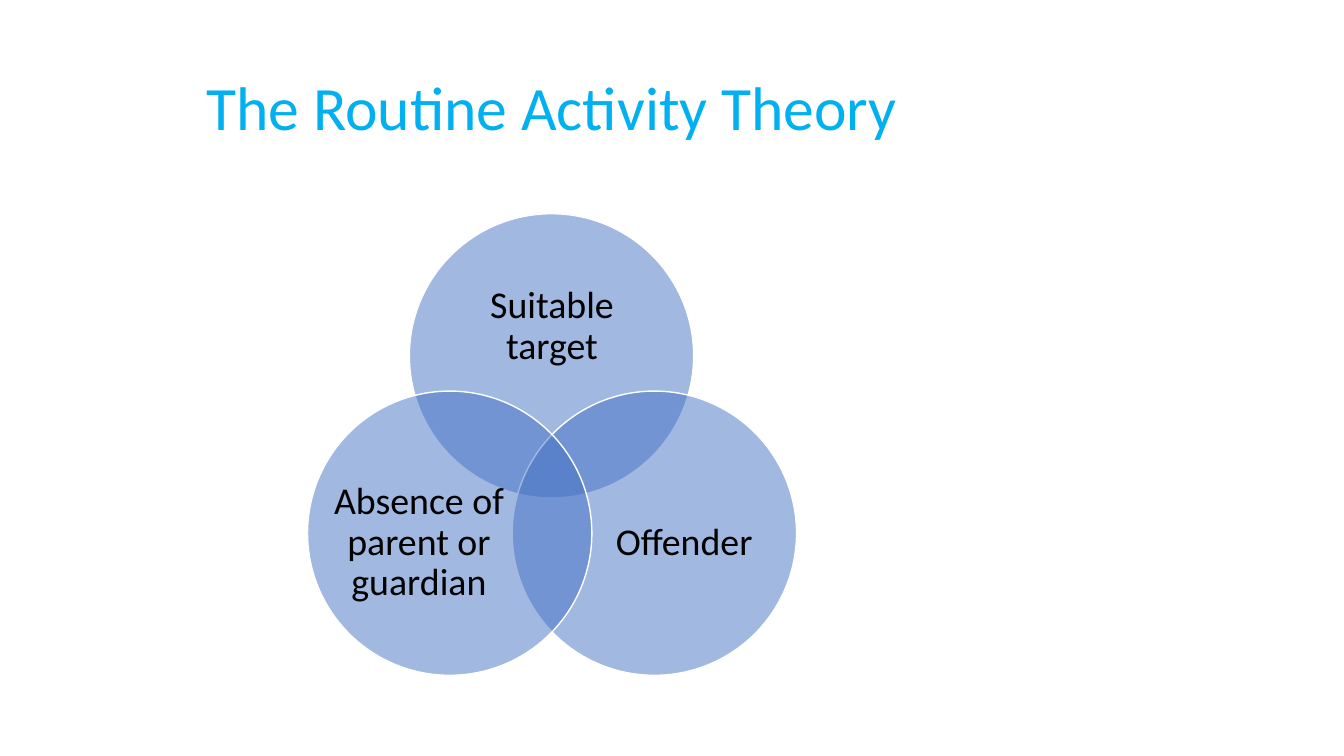
from pptx import Presentation
from pptx.dml.color import RGBColor
from pptx.enum.shapes import MSO_SHAPE
from pptx.enum.text import MSO_ANCHOR, PP_ALIGN
from pptx.oxml.ns import qn
from pptx.util import Inches, Pt
from lxml import etree

OVAL = MSO_SHAPE.OVAL
MIDDLE = MSO_ANCHOR.MIDDLE
CENTER = PP_ALIGN.CENTER

BLUE = RGBColor(0x44, 0x72, 0xC4)
CYAN = RGBColor(0x00, 0xB0, 0xF0)
BLACK = RGBColor(0x00, 0x00, 0x00)
WHITE = RGBColor(0xFF, 0xFF, 0xFF)

DIAMETER = 2.82
VENN = [
    ("Suitable target", (4.06, 2.12), (4.44, 2.61, 2.07, 1.27)),
    ("Offender", (5.08, 3.88), (5.94, 4.61, 1.69, 1.55)),
    ("Absence of parent or guardian", (3.05, 3.88), (3.31, 4.61, 1.69, 1.55)),
]


def write(tf, text, size=27, color=BLACK, font="Calibri", spacing=0.9):
    p = tf.paragraphs[0]
    p.alignment = CENTER
    p.line_spacing = spacing
    r = p.add_run()
    r.text = text
    r.font.name = font
    r.font.size = Pt(size)
    r.font.color.rgb = color


class SlideBuilder:
    def __init__(self, slide, fill=BLUE, line=WHITE, opacity=50):
        self.slide = slide
        self.fill = fill
        self.line = line
        self.opacity = opacity

    def text(self, text, box, inset=0, **style):
        sp = self.slide.shapes.add_textbox(*map(Inches, box))
        tf = sp.text_frame
        tf.word_wrap = True
        tf.vertical_anchor = MIDDLE
        tf.margin_left = tf.margin_right = Inches(inset)
        tf.margin_top = tf.margin_bottom = Inches(inset / 2)
        write(tf, text, **style)

    def circle(self, left, top, diameter):
        sp = self.slide.shapes.add_shape(
            OVAL, Inches(left), Inches(top), Inches(diameter), Inches(diameter))
        sp.shadow.inherit = False
        sp.fill.solid()
        sp.fill.fore_color.rgb = self.fill
        color = sp._element.spPr.find(qn("a:solidFill"))[0]
        etree.SubElement(color, qn("a:alpha"), val=str(self.opacity * 1000))
        sp.line.color.rgb = self.line
        sp.line.width = Pt(1)


def main():
    prs = Presentation()
    prs.slide_width = Inches(13.33)
    prs.slide_height = Inches(7.5)
    s = SlideBuilder(prs.slides.add_slide(prs.slide_layouts[6]))
    s.text("The Routine Activity Theory", (0.92, 0.4, 9.11, 1.4),
           inset=0.1, size=44, color=CYAN)
    for label, corner, box in VENN:
        s.circle(*corner, DIAMETER)
        s.text(label, box)
    prs.save("out.pptx")


if __name__ == "__main__":
    main()
